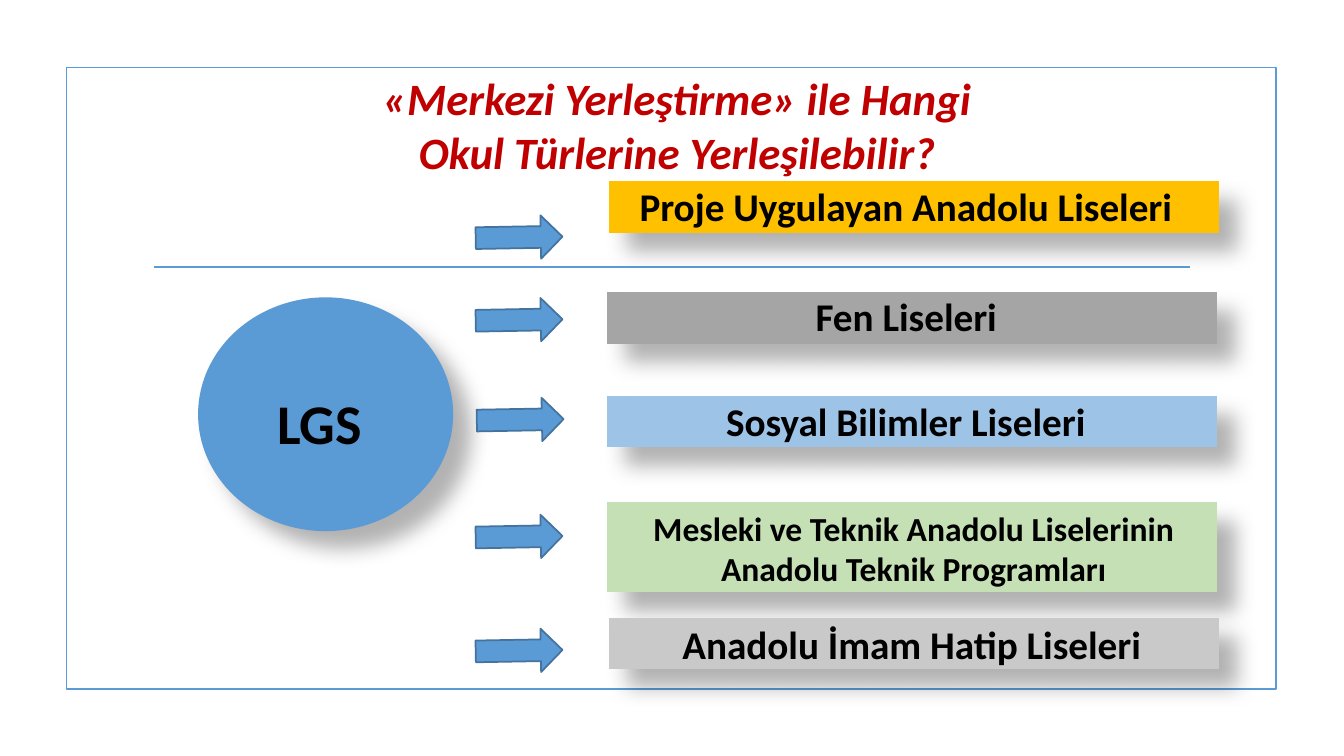
from lxml import etree
from pptx import Presentation
from pptx import util as u
from pptx.dml.color import RGBColor
from pptx.enum import shapes, text
from pptx.oxml.ns import qn

Pt = u.Pt
COLOURS = {
    "blue": "5B9BD5", "edge": "43739E", "red": "C00000", "black": "000000",
    "gold": "FFC000", "grey": "A5A5A5", "sky": "9DC3E6", "green": "C5E0B4",
    "silver": "C9C9C9",
}
rgb = {name: RGBColor.from_string(value) for name, value in COLOURS.items()}

deck = Presentation()
deck.slide_width, deck.slide_height = Pt(960), Pt(540)
slide = deck.slides.add_slide(deck.slide_layouts[5])


def add_figure(kind, box, fill=None, line=None, shadow=False):
    figure = slide.shapes.add_shape(kind, *map(Pt, box))
    figure.shadow.inherit = False
    if fill:
        figure.fill.solid()
        figure.fill.fore_color.rgb = rgb[fill]
    else:
        figure.fill.background()
    if line:
        figure.line.color.rgb = rgb[line]
        figure.line.width = Pt(1.25)
    else:
        figure.line.fill.background()
    if shadow:
        effects = figure._element.spPr.find(qn("a:effectLst"))
        outer = etree.SubElement(effects, qn("a:outerShdw"), blurRad=str(Pt(15)),
                                 dist=str(Pt(18)), dir="2700000", algn="tl", rotWithShape="0")
        tint = etree.SubElement(outer, qn("a:srgbClr"), val=COLOURS["black"])
        etree.SubElement(tint, qn("a:alpha"), val="30000")
    return figure


def write(holder, lines, size, colour="black", italic=False):
    frame = holder.text_frame
    frame.text = "\n".join(lines)
    frame_format = {"word_wrap": True, "auto_size": text.MSO_AUTO_SIZE.NONE,
                    "vertical_anchor": text.MSO_ANCHOR.TOP}
    for key, value in frame_format.items():
        setattr(frame, key, value)
    font_format = {"name": "Calibri", "size": Pt(size), "bold": True, "italic": italic}
    for paragraph in frame.paragraphs:
        paragraph.alignment = text.PP_ALIGN.CENTER
        for run in paragraph.runs:
            for key, value in font_format.items():
                setattr(run.font, key, value)
            run.font.color.rgb = rgb[colour]


# Frame and rule
add_figure(shapes.MSO_SHAPE.RECTANGLE, (47.5, 48.2, 864, 444.2), line="blue")
rule = slide.shapes.add_connector(shapes.MSO_CONNECTOR.STRAIGHT,
                                  Pt(110.2), Pt(190.8), Pt(850.3), Pt(190.8))
rule.line.color.rgb = rgb["blue"]
rule.line.width = Pt(1.25)
etree.SubElement(rule._element.spPr, qn("a:effectLst"))

# Title
title = slide.shapes.title
title_place = {"left": 43.2, "top": 46.8, "width": 881.3, "height": 85}
for key, value in title_place.items():
    setattr(title, key, Pt(value))
write(title, ["«Merkezi Yerleştirme» ile Hangi", "Okul Türlerine Yerleşilebilir?"],
      32, "red", italic=True)

# Exam circle
add_figure(shapes.MSO_SHAPE.OVAL, (141.5, 212.4, 182.2, 167), "blue", shadow=True)
exam = slide.shapes.add_textbox(Pt(144.7), Pt(274.3), Pt(167), Pt(55.4))
write(exam, ["LGS"], 40)

# School types: name, size, colour, bar (left, top, height), label box, arrow (left, top)
schools = [
    ("Proje Uygulayan Anadolu Liseleri", 28, "gold", (356.4, 69.8, 156.2),
     (431.3, 126.7, 431.3, 41), (339.8, 154.1)),
    ("Fen Liseleri", 28, "grey", (355, 149, 156.2),
     (518.4, 205.2, 257.8, 41), (339.8, 213.1)),
    ("Sosyal Bilimler Liseleri", 28, "sky", (355, 223.2, 156.2),
     (438.5, 280.1, 416.9, 41), (340.6, 284.4)),
    ("Mesleki ve Teknik Anadolu Liselerinin Anadolu Teknik Programları", 24, "green",
     (355, 254.2, 273.6), (440.6, 359.3, 424.1, 65.5), (339.8, 367.9)),
    ("Anadolu İmam Hatip Liseleri", 28, "silver", (356.4, 381.6, 156.2),
     (433.4, 439.2, 435.6, 41), (339.8, 449.3)),
]
for name, size, colour, (left, top, height), label_box, arrow_at in schools:
    add_figure(shapes.MSO_SHAPE.MATH_MINUS, (left, top, 592.6, height), colour, shadow=True)
    label = slide.shapes.add_textbox(*map(Pt, label_box))
    write(label, [name], size)
    arrow = add_figure(shapes.MSO_SHAPE.RIGHT_ARROW, (*arrow_at, 62, 31), "blue", "edge")
    arrow.rotation = 359

deck.save("out.pptx")
